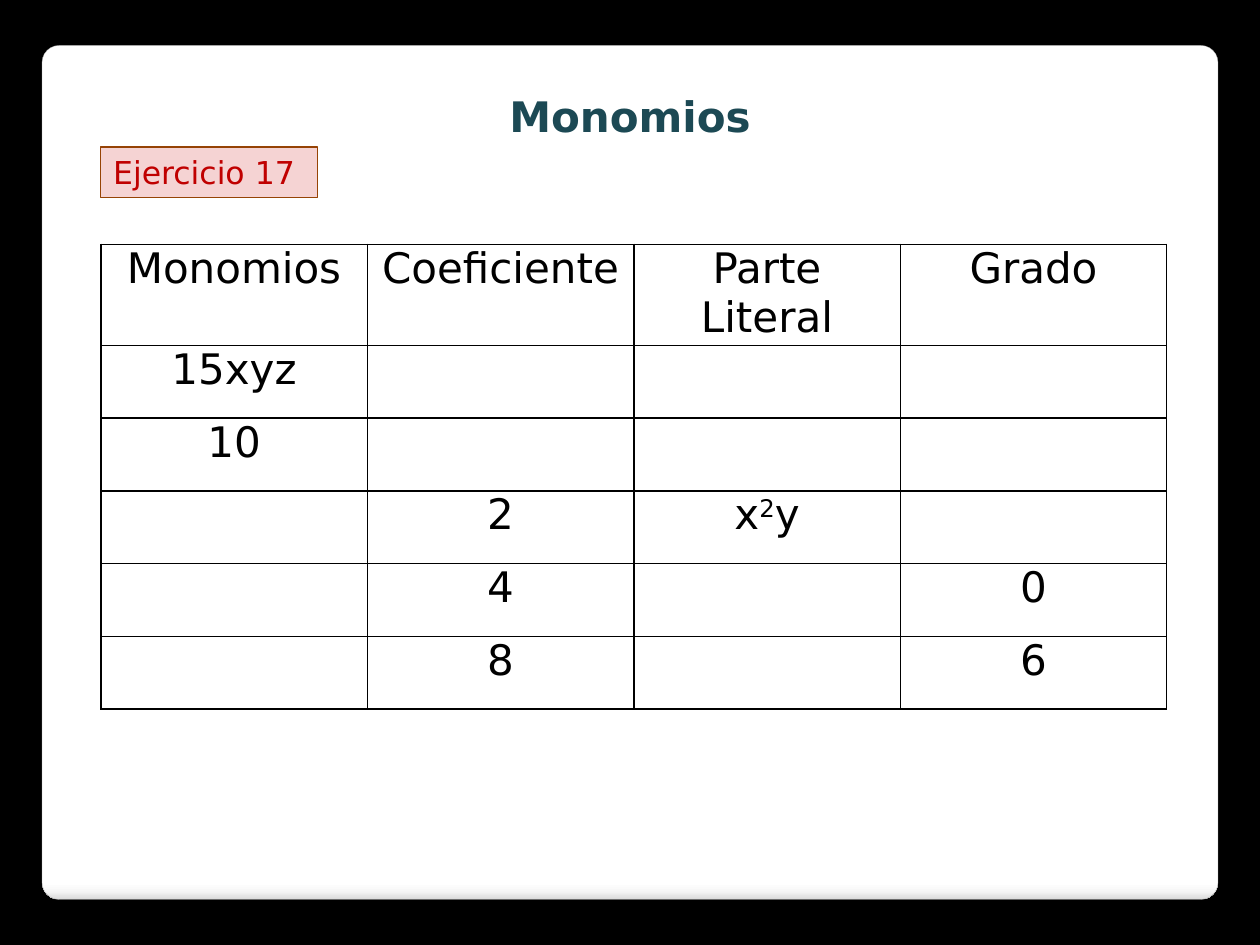
"""Build the slide of exercise 17 on monomials."""
from lxml import etree
from pptx import Presentation
from pptx.dml.color import RGBColor
from pptx.enum.shapes import MSO_SHAPE
from pptx.enum.text import MSO_ANCHOR, PP_ALIGN
from pptx.oxml import parse_xml
from pptx.oxml.ns import nsdecls, qn
from pptx.util import Pt

RECT, ROUND = MSO_SHAPE.RECTANGLE, MSO_SHAPE.ROUNDED_RECTANGLE
LEFT, MID = PP_ALIGN.LEFT, PP_ALIGN.CENTER
TOP, CENTER = MSO_ANCHOR.TOP, MSO_ANCHOR.MIDDLE

FONT = "DejaVu Sans"
TITLE = "Monomios"
LABEL = "Ejercicio 17"
ROWS = [
    ["Monomios", "Coeficiente", "Parte Literal", "Grado"],
    ["15xyz", "", "", ""],
    ["10", "", "", ""],
    ["", "2", "x^2^y", ""],
    ["", "4", "", "0"],
    ["", "8", "", "6"],
]
STOPS = [(0, "FFFFFF"), (98, "FFFFFF"), (99, "F7F7F7"), (100, "DADADA")]
EDGE = 57.6
COL = 152.3
HEAD, ROW = 57.6, 41.6


def paint(part, color):
    part.solid()
    part.fore_color.rgb = RGBColor.from_string(color)


def write(frame, text, size=24, color="000000", bold=False, align=MID, after=0):
    """Fill a text frame; text between carets is raised."""
    para = frame.paragraphs[0]
    para.alignment = align
    para.space_after = Pt(after)
    for i, piece in enumerate(text.split("^")):
        run = para.add_run()
        run.text = piece
        font = run.font
        font.name, font.size, font.bold = FONT, Pt(size), bold
        paint(font.fill, color)
        if i % 2:
            run._r.get_or_add_rPr().set("baseline", "30000")


def add_box(slide, kind, area, line, width):
    box = slide.shapes.add_shape(kind, *map(Pt, area))
    box.shadow.inherit = False
    paint(box.line.fill, line)
    box.line.width = Pt(width)
    return box


def add_card(slide):
    card = add_box(slide, ROUND, (24, 26, 672, 488), "A4A4A4", 0.16)
    card.adjustments[0] = 0.02
    card.fill.gradient()
    card.fill.gradient_angle = 270
    stops = card.element.spPr.find(".//" + qn("a:gsLst"))
    for stop in list(stops):
        stops.remove(stop)
    for pos, color in STOPS:
        stop = etree.SubElement(stops, qn("a:gs"), pos=str(pos * 1000))
        etree.SubElement(stop, qn("a:srgbClr"), val=color)
    slide.shapes.title.element.addprevious(card.element)


def add_title(slide):
    title = slide.shapes.title
    title.left, title.top, title.width, title.height = map(Pt, (28, 48, 664, 36))
    title.text_frame.vertical_anchor = CENTER
    write(title.text_frame, TITLE, color="1C4954", bold=True)


def add_label(slide):
    label = add_box(slide, RECT, (EDGE, 84, 123.8, 29), "964305", 0.75)
    paint(label.fill, "F5D3D3")
    frame = label.text_frame
    frame.word_wrap = True
    frame.vertical_anchor = CENTER
    write(frame, LABEL, size=18, color="C00000", align=LEFT)


def add_grid(slide):
    cols = len(ROWS[0])
    high = HEAD + ROW * (len(ROWS) - 1)
    area = map(Pt, (EDGE, 139.7, COL * cols, high))
    table = slide.shapes.add_table(len(ROWS), cols, *area).table
    table.first_row = table.horz_banding = False
    for r, texts in enumerate(ROWS):
        table.rows[r].height = Pt(ROW if r else HEAD)
        for c, text in enumerate(texts):
            cell = table.cell(r, c)
            cell.margin_left = cell.margin_right = Pt(5)
            cell.margin_top = cell.margin_bottom = 0
            cell.vertical_anchor = TOP
            cell.fill.background()
            if text:
                write(cell.text_frame, text, after=6)
            props = cell._tc.get_or_add_tcPr()
            for i, side in enumerate("LRTB"):
                props.insert(i, parse_xml(
                    f'<a:ln{side} {nsdecls("a")} w="12700"><a:solidFill>'
                    f'<a:srgbClr val="000000"/></a:solidFill></a:ln{side}>'))


def main():
    deck = Presentation()
    deck.slide_width, deck.slide_height = Pt(720), Pt(540)
    slide = deck.slides.add_slide(deck.slide_layouts[5])
    paint(slide.background.fill, "000000")
    add_card(slide)
    add_title(slide)
    add_label(slide)
    add_grid(slide)
    deck.save("out.pptx")


if __name__ == "__main__":
    main()
